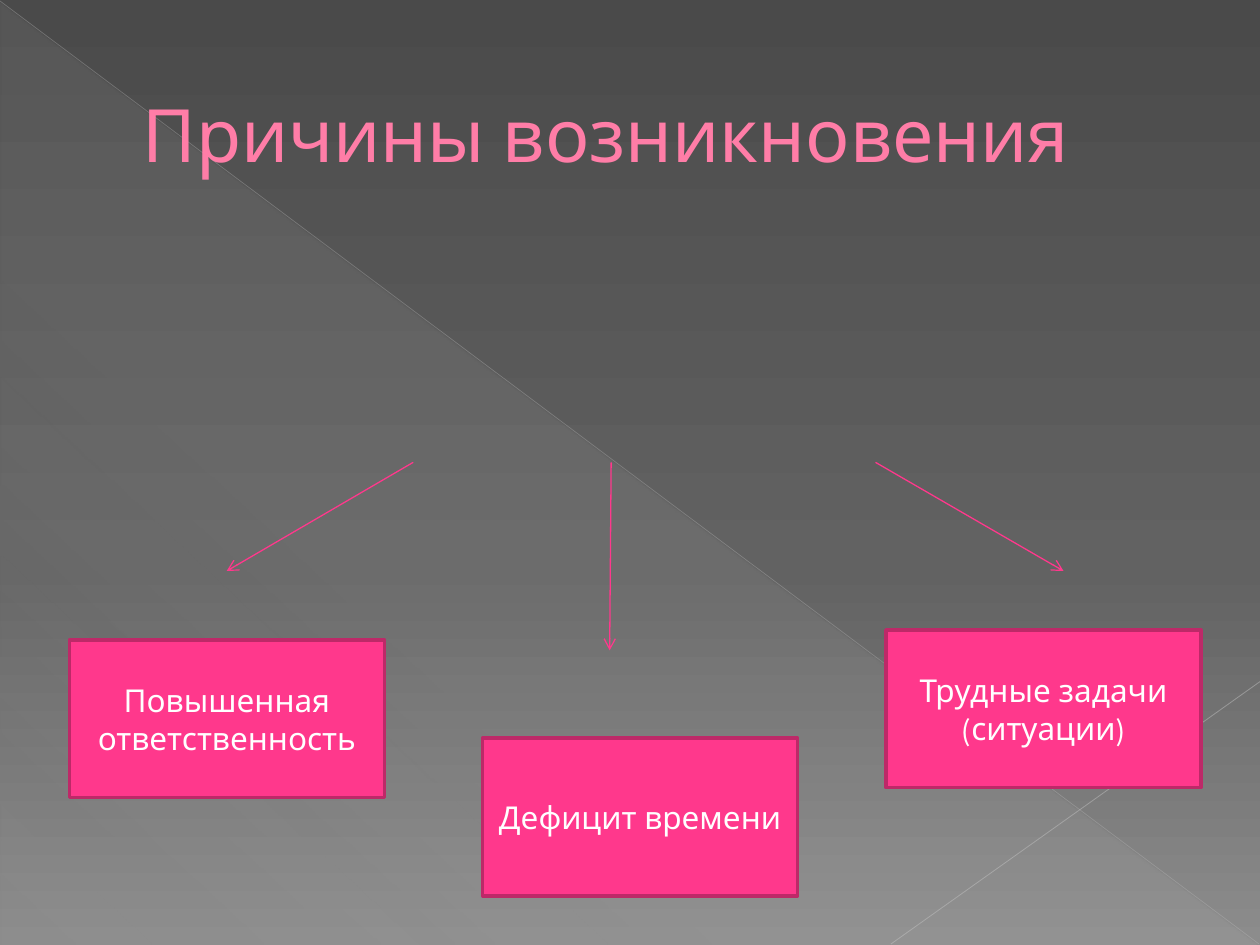
from collections import namedtuple
from dataclasses import dataclass

from lxml import etree
from pptx import Presentation
from pptx.dml.color import RGBColor
from pptx.enum.shapes import MSO_CONNECTOR, MSO_SHAPE
from pptx.enum.text import MSO_ANCHOR, PP_ALIGN
from pptx.oxml.ns import qn
from pptx.util import Cm, Pt

STRAIGHT = MSO_CONNECTOR.STRAIGHT
TRIANGLE, RECTANGLE = MSO_SHAPE.RIGHT_TRIANGLE, MSO_SHAPE.RECTANGLE
MIDDLE = MSO_ANCHOR.MIDDLE
LEFT, CENTER = PP_ALIGN.LEFT, PP_ALIGN.CENTER

Box = namedtuple("Box", "left top width height")
Cause = namedtuple("Cause", "text left top arrow_start arrow_end arrow_drop")


@dataclass(frozen=True)
class Theme:
    """Colours, font and sizes of the deck."""
    font: str = "League Spartan"
    title_size: float = 42
    label_size: float = 18
    title: str = "FF7DA7"
    title_outline: str = "B12761"
    accent: str = "FF388C"
    border: str = "BD2968"
    label: str = "FFFFFF"
    diagonal: str = "BFBFBF"
    corner: str = "C6C6C6"
    backdrop: tuple = ((0, "4A4A4A", 100), (60, "626262", 100), (100, "8C8C8C", 100))
    sheen: tuple = ((0, "D2D2D2", 10), (70, "D2D2D2", 8), (100, "D2D2D2", 1))


THEME = Theme()
SLIDE = Box(0, 0, 25.4, 19.05)
TITLE = Box(1.27, 0.74, 22.86, 3.89)
CAUSES = Box(1.4, 9.32, 22.81, 8.74)
CARD_WIDTH, CARD_HEIGHT = 6.35, 3.18
CAUSE_LIST = (
    Cause("Дефицит времени", 8.33, 5.56, 10.92, 10.89, 3.79),
    Cause("Трудные задачи (ситуации)", 16.46, 3.38, 16.25, 20.04, 2.19),
    Cause("Повышенная ответственность", 0, 3.58, 6.93, 3.17, 2.19),
)


def add_colour(parent, colour, opacity=100):
    """Append an RGB colour with an opacity in percent."""
    node = etree.SubElement(parent, qn("a:srgbClr"), val=colour)
    if opacity < 100:
        etree.SubElement(node, qn("a:alpha"), val=str(opacity * 1000))


def set_gradient(fill, owner, stops, angle):
    """Give a fill the listed stops and a clockwise angle."""
    fill.gradient()
    gradient = owner.find(".//" + qn("a:gradFill"))
    stop_list = gradient.find(qn("a:gsLst"))
    for old in list(stop_list):
        stop_list.remove(old)
    for position, colour, opacity in stops:
        stop = etree.SubElement(stop_list, qn("a:gs"), pos=str(position * 1000))
        add_colour(stop, colour, opacity)
    gradient.find(qn("a:lin")).set("ang", str(angle * 60000))


def add_line(page, start, end, colour, width, opacity=100, arrow=False):
    """Draw a straight line, with an open arrowhead if asked."""
    line = page.shapes.add_connector(STRAIGHT, *map(Cm, (*start, *end)))
    line.line.width = Pt(width)
    line.line.color.rgb = RGBColor.from_string(colour)
    stroke = line.line._get_or_add_ln()
    if opacity < 100:
        tint = stroke.find(".//" + qn("a:srgbClr"))
        etree.SubElement(tint, qn("a:alpha"), val=str(opacity * 1000))
    if arrow:
        etree.SubElement(stroke, qn("a:tailEnd"), type="arrow")
    etree.SubElement(line.element.spPr, qn("a:effectLst"))


def write_text(frame, text, size, colour, align):
    """Write one vertically centred run and return its paragraph and span."""
    frame.word_wrap = True
    frame.vertical_anchor = MIDDLE
    para = frame.paragraphs[0]
    para.alignment = align
    span = para.add_run()
    span.text = text
    span.font.name = THEME.font
    span.font.size = Pt(size)
    span.font.color.rgb = RGBColor.from_string(colour)
    return para, span


def draw_backdrop(page, box):
    """Paint the gradient, the sheen triangle and the two thin lines."""
    set_gradient(page.background.fill, page.element, THEME.backdrop, 90)
    right, bottom = box.left + box.width, box.top + box.height
    triangle = page.shapes.add_shape(
        TRIANGLE, Cm(box.left + 0.02), Cm(box.top + 0.05),
        Cm(box.width - 0.05), Cm(box.height - 0.05))
    triangle.shadow.inherit = False
    triangle.line.fill.background()
    set_gradient(triangle.fill, triangle.element, THEME.sheen, 133)
    add_line(page, (box.left, box.top + 0.02), (right - 0.02, bottom - 0.02),
             THEME.diagonal, 0.39, 35)
    add_line(page, (right, box.top + 13.74), (box.left + 17.96, bottom - 0.02),
             THEME.corner, 0.47, 45)


def draw_title(page, box, text):
    """Place the indented, outlined title."""
    frame = page.shapes.add_textbox(*map(Cm, box)).text_frame
    para, span = write_text(frame, text, THEME.title_size, THEME.title, LEFT)
    para._p.get_or_add_pPr().set("marL", str(Cm(1.35)))
    outline = etree.Element(qn("a:ln"), w=str(Pt(0.5)))
    add_colour(etree.SubElement(outline, qn("a:solidFill")), THEME.title_outline)
    span.font._element.insert(0, outline)


def draw_causes(page, box, causes):
    """Draw the arrows, then the card each one leads to."""
    for cause in causes:
        add_line(page, (box.left + cause.arrow_start, box.top),
                 (box.left + cause.arrow_end, box.top + cause.arrow_drop),
                 THEME.accent, 0.75, arrow=True)
    for cause in causes:
        card = page.shapes.add_shape(
            RECTANGLE, Cm(box.left + cause.left), Cm(box.top + cause.top),
            Cm(CARD_WIDTH), Cm(CARD_HEIGHT))
        card.shadow.inherit = False
        card.fill.solid()
        card.fill.fore_color.rgb = RGBColor.from_string(THEME.accent)
        card.line.color.rgb = RGBColor.from_string(THEME.border)
        card.line.width = Pt(2)
        write_text(card.text_frame, cause.text, THEME.label_size, THEME.label, CENTER)


def main():
    """Build the deck and save it."""
    deck = Presentation()
    deck.slide_width, deck.slide_height = Cm(SLIDE.width), Cm(SLIDE.height)
    page = deck.slides.add_slide(deck.slide_layouts[6])
    draw_backdrop(page, SLIDE)
    draw_title(page, TITLE, "Причины возникновения")
    draw_causes(page, CAUSES, CAUSE_LIST)
    deck.save("out.pptx")


if __name__ == "__main__":
    main()
